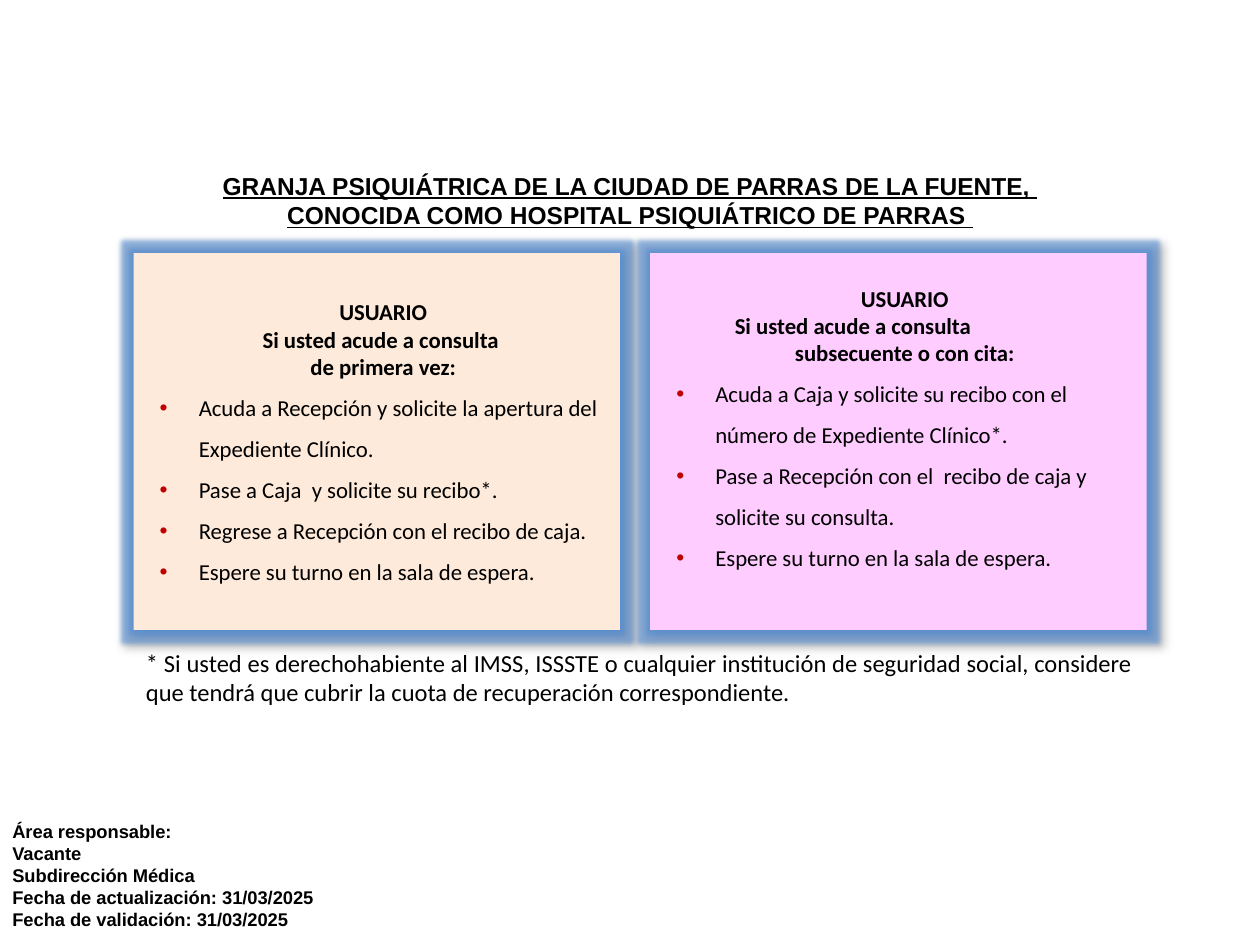
from lxml import etree
from pptx import Presentation
from pptx import util as u
from pptx.dml import color
from pptx.enum import shapes, text
from pptx.oxml import ns

Pt = u.Pt
HEX = {"ink": "000000", "peach": "FDEADA", "pink": "FFCCFF", "dot": "C00000", "glow": "558ED5"}
LEFT, MID, JUST = text.PP_ALIGN.LEFT, text.PP_ALIGN.CENTER, text.PP_ALIGN.JUSTIFY
AREA = ["Área responsable:", "Vacante", "Subdirección Médica",
        "Fecha de actualización: 31/03/2025", "Fecha de validación: 31/03/2025"]
TITLE = ["GRANJA PSIQUIÁTRICA DE LA CIUDAD DE PARRAS DE LA FUENTE, ",
         "CONOCIDA COMO HOSPITAL PSIQUIÁTRICO DE PARRAS "]
NOTE = ["* Si usted es derechohabiente al IMSS, ISSSTE o cualquier institución de seguridad "
        "social, considere que tendrá que cubrir la cuota de recuperación correspondiente."]
FIRST = {
    "head": [("USUARIO", MID, 7.2), ("Si usted acude a consulta ", MID, 7.2),
             ("de primera vez:", MID, 7.2)],
    "steps": ["Acuda a Recepción y solicite la apertura del Expediente Clínico.",
              "Pase a Caja  y solicite su recibo*.",
              "Regrese a Recepción con el recibo de caja.",
              "Espere su turno en la sala de espera."]}
NEXT = {
    "head": [("USUARIO", MID, 7.2), ("Si usted acude a consulta", LEFT, 41.3),
             ("subsecuente o con cita:", MID, 7.2)],
    "steps": ["Acuda a Caja y solicite su recibo con el número de Expediente Clínico*.",
              "Pase a Recepción con el  recibo de caja y solicite su consulta.",
              "Espere su turno en la sala de espera."]}


def rgb(key):
    """Return the named colour."""
    return color.RGBColor.from_string(HEX[key])


def apply(obj, **vals):
    """Set each given attribute on an object."""
    for key, val in vals.items():
        setattr(obj, key, val)


def tint(parent, tag, key, alpha=100, **attrs):
    """Append an element that holds one colour."""
    node = etree.SubElement(parent, ns.qn(tag), {k: str(v) for k, v in attrs.items()})
    fill = etree.SubElement(node, ns.qn("a:srgbClr"), val=HEX[key])
    if alpha < 100:
        etree.SubElement(fill, ns.qn("a:alpha"), val=str(alpha * 1000))


def write(frame, lines, align=None, **font):
    """Fill a frame with equally set paragraphs."""
    for i, line in enumerate(lines):
        par = frame.paragraphs[0] if i == 0 else frame.add_paragraph()
        par.text = line
        par.alignment = align
        apply(par.font, **font)
        par.font.color.rgb = rgb("ink")


def label(slide, box, lines, align=None, top=3.6, **font):
    """Place a wrapped text block in a box."""
    frame = slide.shapes.add_textbox(*map(Pt, box)).text_frame
    apply(frame, word_wrap=True, margin_top=Pt(top))
    write(frame, lines, align, **font)


def halo(card):
    """Give a card its blue glow and soft shadow."""
    card.shadow.inherit = False
    fx = card._element.spPr.find(ns.qn("a:effectLst"))
    tint(fx, "a:glow", "glow", 60, rad=Pt(5))
    tint(fx, "a:outerShdw", "ink", 40, blurRad=Pt(4), dist=Pt(3), dir=2700000)


def panel(slide, box, fill, data, base=3.6):
    """Draw one card with a heading and bulleted steps."""
    card = slide.shapes.add_shape(shapes.MSO_SHAPE.RECTANGLE, *map(Pt, box))
    card.fill.solid()
    card.fill.fore_color.rgb = rgb(fill)
    card.line.fill.background()
    halo(card)
    frame = card.text_frame
    apply(frame, word_wrap=True, margin_bottom=Pt(base), vertical_anchor=text.MSO_ANCHOR.MIDDLE)
    head = data["head"]
    for i, (line, align, inset) in enumerate(head):
        par = frame.paragraphs[0] if i == 0 else frame.add_paragraph()
        apply(par, text=line, alignment=align)
        par._p.get_or_add_pPr().set("marL", str(Pt(inset)))
    for line in data["steps"]:
        par = frame.add_paragraph()
        apply(par, text=line, alignment=LEFT, line_spacing=1.5)
        props = par._p.get_or_add_pPr()
        props.set("marL", str(Pt(30.2)))
        props.set("indent", str(Pt(-22.3)))
        tint(props, "a:buClr", "dot")
        etree.SubElement(props, ns.qn("a:buFont"), typeface="Arial")
        etree.SubElement(props, ns.qn("a:buChar"), char="•")
    for i, par in enumerate(frame.paragraphs):
        apply(par.font, name="Calibri", size=Pt(13), bold=i < len(head))
        par.font.color.rgb = rgb("ink")


def main():
    """Build the slide and save it."""
    deck = Presentation()
    apply(deck, slide_width=Pt(720), slide_height=Pt(540))
    slide = deck.slides.add_slide(deck.slide_layouts[6])
    label(slide, (0, 465, 266, 71), AREA, name="Arial", size=Pt(10.5), bold=True)
    label(slide, (76.3, 77, 567.4, 51), TITLE, MID, 20.5,
          name="Arial", size=Pt(14), bold=True, underline=True)
    panel(slide, (76.3, 144.7, 278, 215.3), "peach", FIRST)
    panel(slide, (371.5, 144.7, 283.7, 215.3), "pink", NEXT, 19.5)
    label(slide, (76.3, 366.5, 578.2, 41), NOTE, JUST, name="Calibri", size=Pt(14))
    deck.save("out.pptx")


if __name__ == "__main__":
    main()
